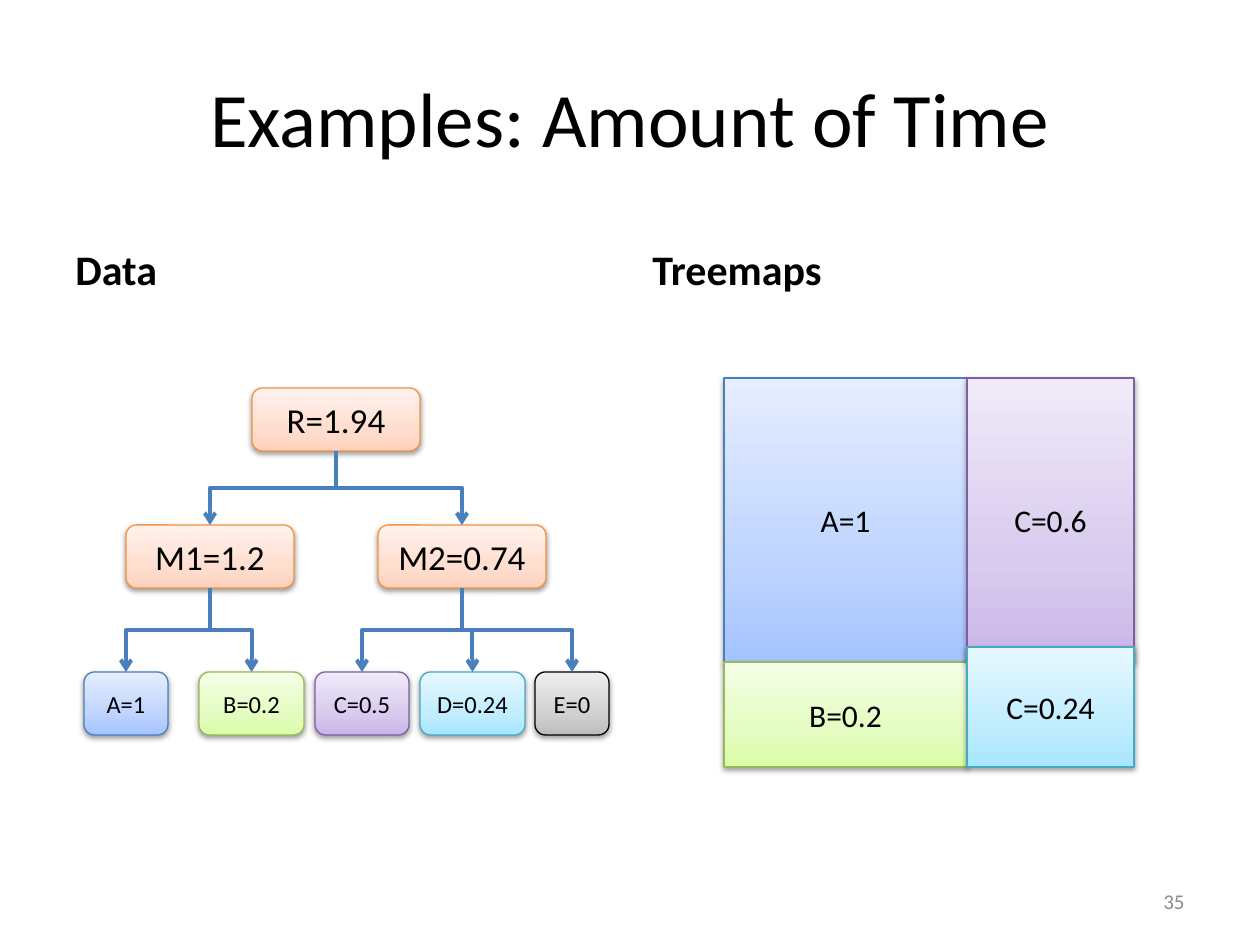
"""Build the slide that shows a time hierarchy as a tree and as a treemap."""
from lxml import etree
from pptx import Presentation
from pptx.dml.color import RGBColor
from pptx.enum.shapes import MSO_CONNECTOR, MSO_SHAPE
from pptx.enum.text import MSO_ANCHOR, PP_ALIGN
from pptx.oxml import parse_xml
from pptx.oxml.ns import nsdecls, qn
from pptx.util import Pt

PX = 914400 / 126
THEME = {
    "font": "Calibri",
    "black": "000000",
    "grey": "8C8C8C",
    "link": "4B7EBC",
    "size": {"title": 44, "heading": 24, "node": 20, "tile": 18, "leaf": 14, "number": 12},
    "fills": {
        "orange": ("F69240", "FFD2BD", "FFDED0", "FFF2ED"),
        "blue": ("4B7EBC", "A4C4FF", "BFD4FF", "E6EEFF"),
        "green": ("98B955", "DAFDA7", "E4FCC2", "F5FFE7"),
        "purple": ("7D60A0", "C9B5E8", "D8CBEE", "F0EAF9"),
        "cyan": ("46AAC5", "A7E6FF", "C1EDFF", "E7F8FF"),
        "black": ("000000", "BDBDBD", "D1D1D1", "EEEEEE"),
    },
}
STOPS = (0, 35, 100)

TEXTS = [
    ("Examples: Amount of Time", (63, 38, 1134, 157), "title", "black", False,
     PP_ALIGN.CENTER, MSO_ANCHOR.MIDDLE),
    ("Data", (63, 212, 557, 88), "heading", "black", True, PP_ALIGN.LEFT, MSO_ANCHOR.BOTTOM),
    ("Treemaps", (640, 212, 557, 88), "heading", "black", True, PP_ALIGN.LEFT, MSO_ANCHOR.BOTTOM),
    ("35", (903, 876, 294, 50), "number", "grey", False, PP_ALIGN.RIGHT, MSO_ANCHOR.MIDDLE),
]
NODE_H = 63
TREE = [
    (388, "node", [("R=1.94", 252, 168, "orange", None)]),
    (525, "node", [("M1=1.2", 126, 168, "orange", "R=1.94"),
                   ("M2=0.74", 378, 168, "orange", "R=1.94")]),
    (672, "leaf", [("A=1", 84, 84, "blue", "M1=1.2"),
                   ("B=0.2", 199, 105, "green", "M1=1.2"),
                   ("C=0.5", 315, 94, "purple", "M2=0.74"),
                   ("D=0.24", 420, 105, "cyan", "M2=0.74"),
                   ("E=0", 535, 74, "black", "M2=0.74")]),
]
MAP_TOP, MAP_BOTTOM = 378, 767
TREEMAP = [
    (724, 243, [("A=1", 284, 105, "blue"), ("B=0.2", 105, 0, "green")]),
    (967, 167, [("C=0.6", 284, 105, "purple"), ("C=0.24", 120, 0, "cyan")]),
]


def emu(*lengths):
    return [round(n * PX) for n in lengths]


def apply(target, values):
    for name, value in values.items():
        setattr(target, name, value)


def write(s, text, size, color="black", bold=False, align=PP_ALIGN.CENTER,
          anchor=MSO_ANCHOR.MIDDLE):
    tf = s.text_frame
    apply(tf, {"word_wrap": True, "vertical_anchor": anchor})
    p = tf.paragraphs[0]
    p.alignment = align
    r = p.add_run()
    r.text = text
    apply(r.font, {"name": THEME["font"], "size": Pt(THEME["size"][size]), "bold": bold})
    r.font.color.rgb = RGBColor.from_string(THEME[color])


def add_box(shapes, kind, box, text, size, fill):
    edge, *tones = THEME["fills"][fill]
    s = shapes.add_shape(kind, *emu(*box))
    s.line.color.rgb = RGBColor.from_string(edge)
    s.line.width = Pt(0.75)
    stops = "".join(f'<a:gs pos="{pos * 1000}"><a:srgbClr val="{tone}"/></a:gs>'
                    for pos, tone in zip(STOPS, tones))
    sp_pr = s._element.spPr
    sp_pr.find(qn("a:prstGeom")).addnext(parse_xml(
        f'<a:gradFill {nsdecls("a")} rotWithShape="1"><a:gsLst>{stops}</a:gsLst>'
        '<a:lin ang="16200000" scaled="0"/></a:gradFill>'))
    sp_pr.append(parse_xml(
        f'<a:effectLst {nsdecls("a")}><a:outerShdw blurRad="40000" dist="20000" dir="5400000"'
        f' rotWithShape="0"><a:srgbClr val="{THEME["black"]}"><a:alpha val="38000"/></a:srgbClr>'
        '</a:outerShdw></a:effectLst>'))
    write(s, text, size)
    return s


def add_link(shapes, parent, child):
    x1, y1 = parent.left + parent.width // 2, parent.top + parent.height
    x2, y2 = child.left + child.width // 2, child.top
    drop, shift = y2 - y1, abs(x2 - x1)
    c = shapes.add_connector(MSO_CONNECTOR.ELBOW, x1, y1, x2, y2)
    c.begin_connect(parent, 2)
    c.end_connect(child, 0)
    apply(c, {"left": (x1 + x2 - drop) // 2, "top": (y1 + y2 - shift) // 2,
              "width": drop, "height": shift})
    rot, flip = ("5400000", "0") if x2 < x1 else ("16200000", "1")
    sp_pr = c._element.spPr
    for name, value in {"rot": rot, "flipH": flip, "flipV": "0"}.items():
        sp_pr.find(qn("a:xfrm")).set(name, value)
    c.line.color.rgb = RGBColor.from_string(THEME["link"])
    c.line.width = Pt(2.25)
    etree.SubElement(sp_pr.find(qn("a:ln")), qn("a:tailEnd"), type="arrow")
    etree.SubElement(sp_pr, qn("a:effectLst"))


def main():
    prs = Presentation()
    prs.slide_width, prs.slide_height = emu(1260, 945)
    shapes = prs.slides.add_slide(prs.slide_layouts[6]).shapes

    for text, box, *style in TEXTS:
        write(shapes.add_textbox(*emu(*box)), text, *style)

    nodes, links = {}, []
    for top, size, row in TREE:
        for text, left, width, fill, parent in row:
            nodes[text] = add_box(shapes, MSO_SHAPE.ROUNDED_RECTANGLE,
                                  (left, top, width, NODE_H), text, size, fill)
            if parent:
                links.append((parent, text))
    for parent, child in links:
        add_link(shapes, nodes[parent], nodes[child])

    treemap = shapes.add_group_shape().shapes
    for left, width, tiles in TREEMAP:
        for text, height, below, fill in tiles:
            add_box(treemap, MSO_SHAPE.RECTANGLE,
                    (left, MAP_BOTTOM - below - height, width, height), text, "tile", fill)

    prs.save("out.pptx")


if __name__ == "__main__":
    main()
